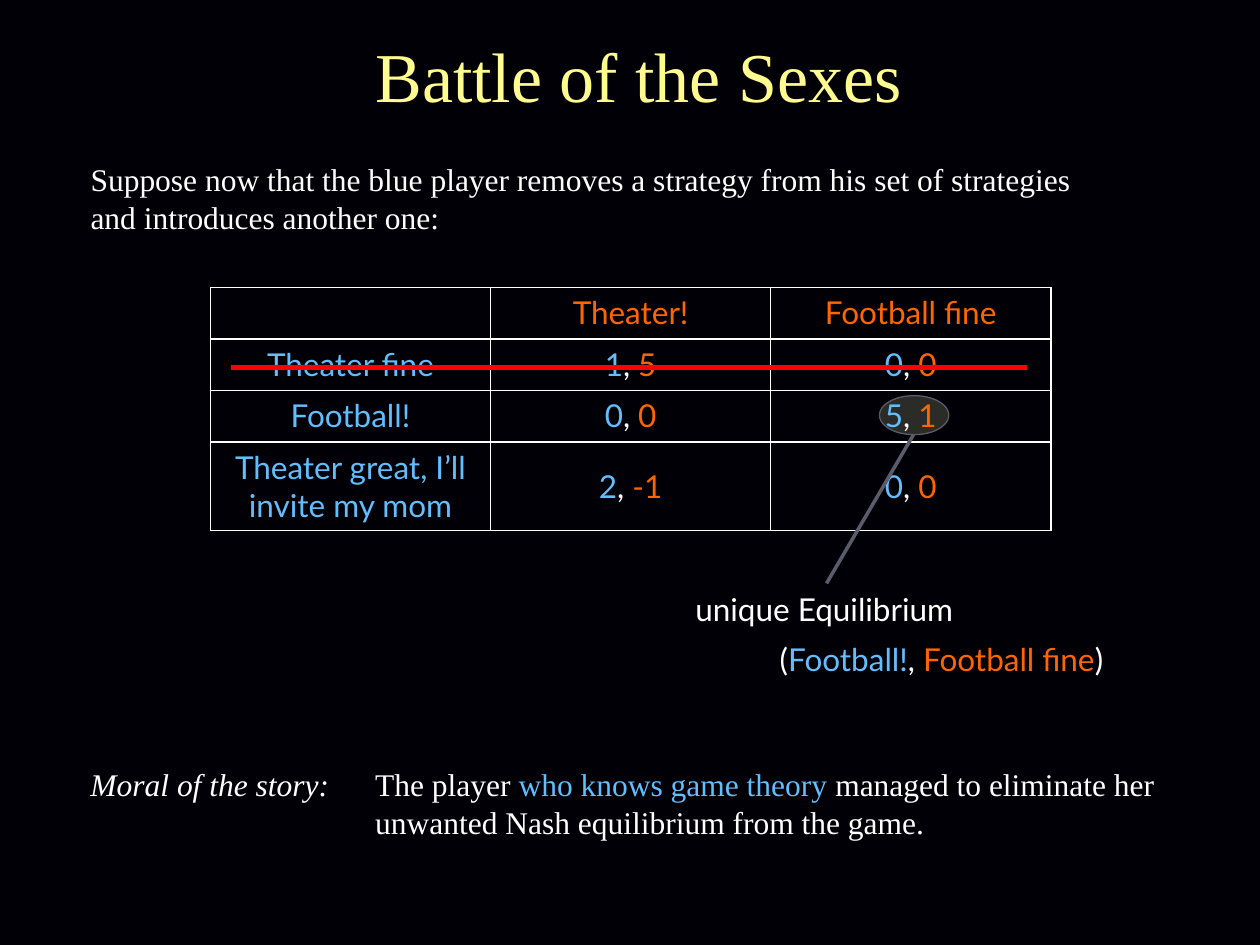
"""Build the Battle of the Sexes slide with its payoff table and equilibrium callout."""
from lxml import etree
from pptx import Presentation
from pptx import util as u
from pptx.dml import color
from pptx.enum import shapes, text
from pptx.oxml import ns

COLORS = {"night": "010006", "title": "FFFB8F", "white": "FFFFFF", "blue": "63BEFF",
          "orange": "FF6600", "slate": "5A5C6C", "red": "FF0000", "cream": "FFFFCC"}
RGB = {name: color.RGBColor.from_string(value) for name, value in COLORS.items()}
SERIF, SANS = "Times New Roman", "Lato"


def write(frame, runs, font, size=18, align=text.PP_ALIGN.LEFT, italic=False):
    paragraph = frame.paragraphs[0]
    paragraph.alignment = align
    for words, tone in runs:
        run = paragraph.add_run()
        run.text = words
        run.font.name, run.font.size = font, u.Pt(size)
        run.font.italic = italic
        run.font.color.rgb = RGB[tone]


def draw_line(start, end, tone, width):
    line = slide.shapes.add_connector(shapes.MSO_CONNECTOR.STRAIGHT,
                                      *map(u.Inches, start + end))
    line.line.color.rgb = RGB[tone]
    line.line.width = u.Pt(width)
    etree.SubElement(line._element.spPr, ns.qn("a:effectLst"))


deck = Presentation()
deck.slide_width, deck.slide_height = u.Inches(10), u.Inches(7.5)
slide = deck.slides.add_slide(deck.slide_layouts[5])
slide.background.fill.solid()
slide.background.fill.fore_color.rgb = RGB["night"]

title = slide.shapes.title
title.left, title.top, title.width, title.height = map(u.Inches, (2.88, 0.21, 4.42, 0.77))
title.text_frame.word_wrap = False
title.text_frame.auto_size = text.MSO_AUTO_SIZE.NONE
write(title.text_frame, [("Battle of the Sexes", "title")], SERIF, 40)

highlight = slide.shapes.add_shape(shapes.MSO_SHAPE.OVAL,
                                   *map(u.Inches, (6.98, 3.14, 0.55, 0.31)))
highlight.shadow.inherit = False
highlight.fill.solid()
highlight.fill.fore_color.rgb = RGB["cream"]
tint = highlight._element.spPr.find(ns.qn("a:solidFill"))[0]
etree.SubElement(tint, ns.qn("a:alpha"), val="17000")
highlight.line.color.rgb = RGB["slate"]
highlight.line.width = u.Pt(0.75)

her_choices = ["Theater!", "Football fine"]
his_payoffs = [("Theater fine", [("1", "5"), ("0", "0")]),
               ("Football!", [("0", "0"), ("5", "1")]),
               ("Theater great, I’ll invite my mom", [("2", "-1"), ("0", "0")])]
grid = [[[]] + [[(choice, "orange")] for choice in her_choices]]
for strategy, payoffs in his_payoffs:
    grid.append([[(strategy, "blue")]] + [[(his, "blue"), (", ", "white"), (hers, "orange")]
                                          for his, hers in payoffs])

game = slide.shapes.add_table(4, 3, *map(u.Inches, (1.67, 2.28, 6.67, 1.92))).table
game.first_row = game.horz_banding = False
for row, height in zip(game.rows, (0.41, 0.41, 0.41, 0.7)):
    row.height = u.Inches(height)
for r, entries in enumerate(grid):
    for c, runs in enumerate(entries):
        cell = game.cell(r, c)
        write(cell.text_frame, runs, SANS, align=text.PP_ALIGN.CENTER)
        if r == 3 and c > 0:
            cell.vertical_anchor = text.MSO_ANCHOR.MIDDLE
        for side in ("lnL", "lnR", "lnT", "lnB"):
            border = etree.SubElement(cell._tc.get_or_add_tcPr(), ns.qn(f"a:{side}"),
                                      w=str(u.Pt(1)))
            paint = etree.SubElement(border, ns.qn("a:solidFill"))
            etree.SubElement(paint, ns.qn("a:srgbClr"), val=COLORS["white"])
        cell.fill.background()

draw_line((7.25, 3.45), (6.56, 4.63), "slate", 2)
draw_line((1.83, 2.92), (8.15, 2.92), "red", 2.75)

passages = [
    ((5.42, 4.63, 2.27, 0.4), SANS, False, False, [("unique Equilibrium", "white")]),
    ((6.09, 5.03, 2.87, 0.4), SANS, False, False,
     [("(", "white"), ("Football!", "blue"), (", ", "white"),
      ("Football fine", "orange"), (") ", "white")]),
    ((0.62, 6.02, 2.2, 0.4), SERIF, True, False, [("Moral of the story:", "white")]),
    ((0.62, 1.22, 8.35, 0.71), SERIF, False, True,
     [("Suppose now that the blue player removes a strategy from his set of strategies "
       "and introduces another one:", "white")]),
    ((2.88, 6.02, 6.46, 0.71), SERIF, False, True,
     [("The player ", "white"), ("who knows game theory ", "blue"),
      ("managed to eliminate her unwanted Nash equilibrium from the game.", "white")]),
]
for place, font, italic, wrap, runs in passages:
    passage = slide.shapes.add_textbox(*map(u.Inches, place)).text_frame
    passage.word_wrap = wrap
    passage.auto_size = text.MSO_AUTO_SIZE.SHAPE_TO_FIT_TEXT
    write(passage, runs, font, italic=italic)

deck.save("out.pptx")
